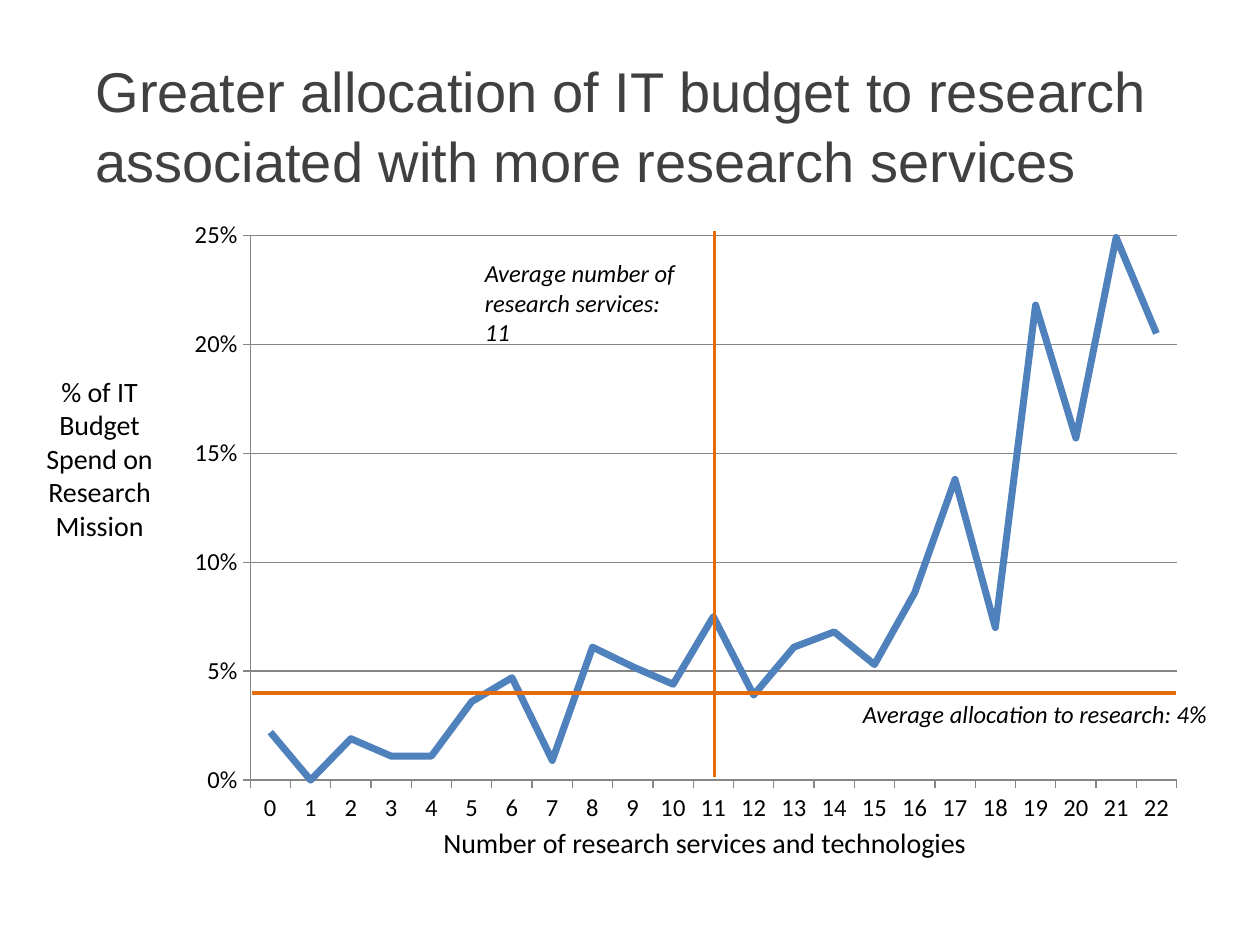
from dataclasses import dataclass

from lxml import etree
from pptx import Presentation
from pptx.chart.data import CategoryChartData
from pptx.dml.color import RGBColor
from pptx.enum.chart import XL_CHART_TYPE, XL_TICK_MARK
from pptx.enum.shapes import MSO_CONNECTOR
from pptx.enum.text import PP_ALIGN
from pptx.oxml import parse_xml
from pptx.oxml.ns import nsdecls, qn
from pptx.util import Inches, Pt

LINE_CHART = XL_CHART_TYPE.LINE
TICK_OUT, TICK_NONE = XL_TICK_MARK.OUTSIDE, XL_TICK_MARK.NONE
STRAIGHT = MSO_CONNECTOR.STRAIGHT
LEFT, CENTER = PP_ALIGN.LEFT, PP_ALIGN.CENTER


@dataclass(frozen=True)
class Theme:
    title_font: str = "Arial"
    body_font: str = "Calibri"
    title_color: RGBColor = RGBColor(0x40, 0x40, 0x40)
    text_color: RGBColor = RGBColor(0, 0, 0)
    grid_color: RGBColor = RGBColor(0x86, 0x86, 0x86)
    series_color: RGBColor = RGBColor(0x4F, 0x81, 0xBD)
    average_color: RGBColor = RGBColor(0xE4, 0x6C, 0x0A)
    title_size: Pt = Pt(32)
    label_size: Pt = Pt(16)
    note_size: Pt = Pt(14)


theme = Theme()
prs = Presentation()
prs.slide_width, prs.slide_height = Inches(10), Inches(7.5)
slide = prs.slides.add_slide(prs.slide_layouts[6])


def add_text(text, box, size, font=theme.body_font, color=theme.text_color,
             align=LEFT, italic=False):
    frame = slide.shapes.add_textbox(*map(Inches, box)).text_frame
    frame.word_wrap = True
    frame.text = text
    paragraph = frame.paragraphs[0]
    paragraph.alignment = align
    run_font = paragraph.runs[0].font
    run_font.name, run_font.size, run_font.italic = font, size, italic
    run_font.color.rgb = color
    return paragraph


# Title
title = add_text("Greater allocation of IT budget to research associated with "
                 "more research services", (0.66, 0.37, 8.77, 0.8),
                 theme.title_size, theme.title_font, theme.title_color)
title.line_spacing = 1.05

# Budget share by number of services
budget_shares = [0.022, 0, 0.019, 0.011, 0.011, 0.036, 0.047, 0.009,
                 0.061, 0.052, 0.044, 0.075, 0.039, 0.061, 0.068, 0.053,
                 0.086, 0.138, 0.07, 0.218, 0.157, 0.249, 0.205]
data = CategoryChartData(number_format="0%")
data.categories = [str(count) for count in range(len(budget_shares))]
data.add_series("Series 1", budget_shares)
chart = slide.shapes.add_chart(LINE_CHART, Inches(1.42), Inches(1.67),
                               Inches(8.08), Inches(4.97), data).chart
chart.has_legend = False
chart.has_title = False
chart.font.name = theme.body_font
chart.font.size = theme.note_size
chart.font.color.rgb = theme.text_color

plot = chart.plots[0]
plot.vary_by_categories = False
series = plot.series[0]
series.smooth = False
series.format.line.color.rgb = theme.series_color
series.format.line.width = Pt(4)

# Axes
share_axis, count_axis = chart.value_axis, chart.category_axis
for axis in (share_axis, count_axis):
    axis.major_tick_mark, axis.minor_tick_mark = TICK_OUT, TICK_NONE
    axis.format.line.color.rgb = theme.grid_color
    axis.tick_labels.font.size = theme.note_size
share_axis.minimum_scale, share_axis.maximum_scale = 0, 0.25
share_axis.major_unit = 0.05
share_axis.tick_labels.number_format = "0%"
share_axis.tick_labels.number_format_is_linked = False
share_axis.has_major_gridlines = True
share_axis.major_gridlines.format.line.color.rgb = theme.grid_color

# Fixed inner plot area, as fractions of the chart
plot_area = count_axis._element.getparent()
for old_layout in plot_area.findall(qn("c:layout")):
    plot_area.remove(old_layout)
parts = [("xMode", "edge"), ("yMode", "edge"), ("x", 0.07), ("y", 0.04),
         ("w", 0.91), ("h", 0.87)]
layout = parse_xml(f'<c:layout {nsdecls("c")}><c:manualLayout>'
                   '<c:layoutTarget val="inner"/></c:manualLayout></c:layout>')
for tag, value in parts:
    etree.SubElement(layout[0], qn(f"c:{tag}")).set("val", str(value))
plot_area.insert(0, layout)

# Axis titles
add_text("Number of research services and technologies",
         (3.42, 6.5, 4.67, 0.37), theme.label_size)
add_text("% of IT Budget Spend on Research Mission",
         (0.08, 2.92, 1.42, 1.45), theme.label_size, align=CENTER)

# Average lines
for ends in ((2, 5.5, 9.33, 5.5), (5.67, 6.17, 5.67, 1.83)):
    average = slide.shapes.add_connector(STRAIGHT, *map(Inches, ends))
    average.line.color.rgb = theme.average_color
    average.line.width = Pt(2)
    etree.SubElement(average._element.spPr, qn("a:effectLst"))

# Notes on the averages
for note, box in (
    ("Average allocation to research: 4%", (6.75, 5.5, 3.08, 0.34)),
    ("Average number of research services: 11", (3.75, 2, 1.83, 0.57)),
):
    add_text(note, box, theme.note_size, italic=True)

prs.save("out.pptx")
